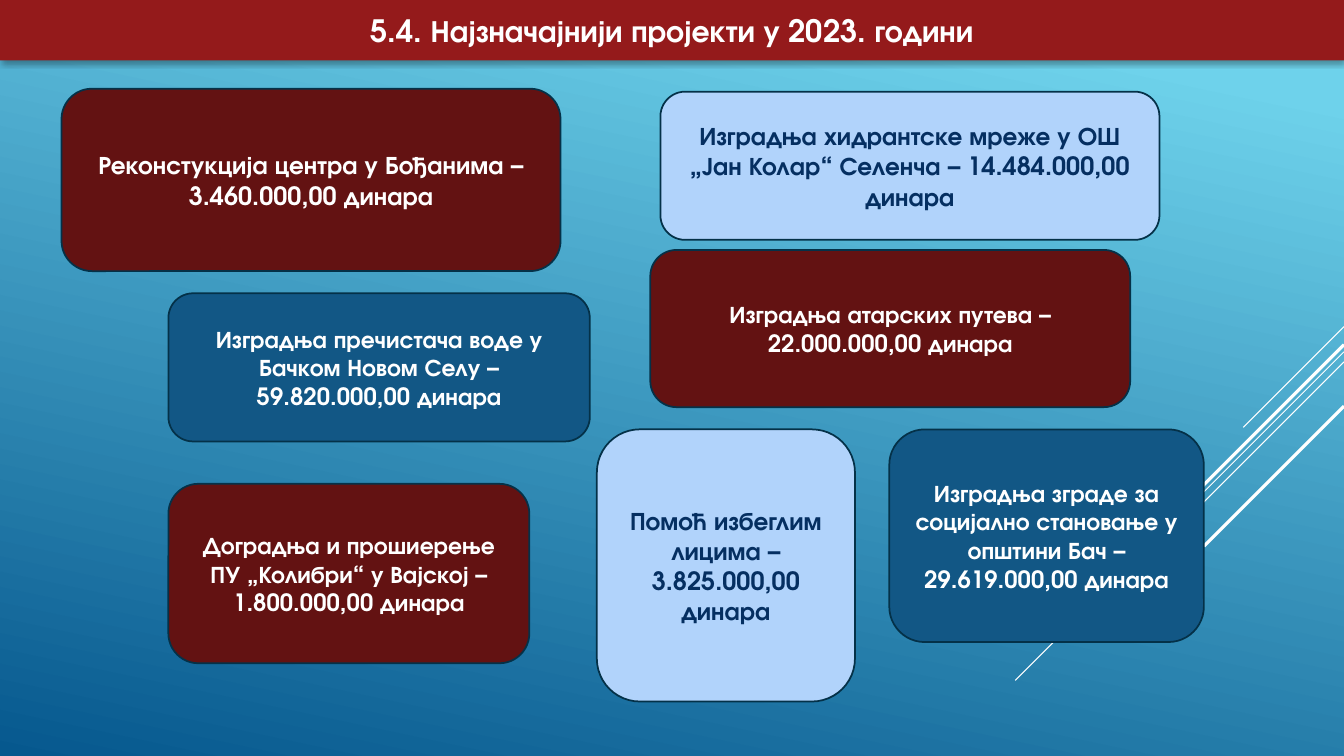
from lxml import etree
from pptx import Presentation
from pptx.dml.color import RGBColor
from pptx.enum.shapes import MSO_CONNECTOR, MSO_SHAPE
from pptx.enum.text import MSO_ANCHOR, MSO_AUTO_SIZE, PP_ALIGN
from pptx.oxml import parse_xml
from pptx.oxml.ns import nsdecls, qn
from pptx.util import Inches, Pt

WIDTH, HEIGHT = 13.33, 7.5
FONT = "TeX Gyre Adventor"
WHITE = RGBColor(0xFF, 0xFF, 0xFF)
NAVY = RGBColor(0x05, 0x2F, 0x61)
OUTLINE = RGBColor(0x04, 0x31, 0x48)
RED = RGBColor(0x94, 0x1A, 0x1B)
MAROON = RGBColor(0x63, 0x12, 0x12)
BLUE = RGBColor(0x12, 0x57, 0x85)
PALE = RGBColor(0xB1, 0xD3, 0xFB)
SKY = RGBColor(0x6E, 0xD2, 0xEB)
DEEP = RGBColor(0x06, 0x58, 0x8E)

TITLE = "5.4. Најзначајнији пројекти у 2023. години"

# Text, (left, top, width, height), fill, font size
PROJECTS = [
    ("Реконстукција центра у Бођанима – 3.460.000,00 динара",
     (0.61, 0.88, 4.95, 1.81), MAROON, 18),
    ("Доградња и прошиерење ПУ „Колибри“ у Вајској – 1.800.000,00 динара",
     (1.67, 4.8, 3.58, 1.78), MAROON, 17),
    ("Изградња хидрантске мреже у ОШ „Јан Колар“ Селенча – 14.484.000,00 динара",
     (6.55, 0.91, 4.95, 1.47), PALE, 18),
    ("Изградња атарских путева – 22.000.000,00 динара",
     (6.45, 2.48, 4.76, 1.56), MAROON, 17),
    ("Помоћ избеглим лицима – 3.825.000,00 динара",
     (5.92, 4.26, 2.56, 2.7), PALE, 18),
    ("Изградња пречистача воде у Бачком Новом Селу – 59.820.000,00 динара",
     (1.67, 2.91, 4.18, 1.47), BLUE, 17),
    ("Изградња зграде за социјално становање у општини Бач – 29.619.000,00 динара",
     (8.82, 4.26, 3.12, 2.11), BLUE, 17),
]

# Diagonals from the right edge: top, horizontal reach, line width
RAYS = [(3.24, 1.0, 0.75), (3.49, 3.26, 0.75), (3.59, 2.07, 0.75),
        (3.42, 1.91, 2.25), (4.03, 1.39, 2.25)]


def place(s, box):
    s.left, s.top, s.width, s.height = (Inches(v) for v in box)


def write(s, text, size, color):
    tf = s.text_frame
    tf.text = text
    tf.word_wrap = True
    tf.auto_size = MSO_AUTO_SIZE.NONE
    tf.vertical_anchor = MSO_ANCHOR.MIDDLE
    p = tf.paragraphs[0]
    p.alignment = PP_ALIGN.CENTER
    p.font.name, p.font.size, p.font.bold = FONT, Pt(size), True
    p.font.color.rgb = color


def add_title(slide):
    s = slide.shapes.title
    place(s, (0, 0, WIDTH, 0.6))
    # Rounded outline and soft shadow for the title bar
    sp_pr = s._element.spPr
    sp_pr.append(parse_xml(
        f'<a:prstGeom {nsdecls("a")} prst="roundRect"><a:avLst/></a:prstGeom>'))
    s.fill.solid()
    s.fill.fore_color.rgb = RED
    sp_pr.append(parse_xml(
        f'<a:effectLst {nsdecls("a")}><a:outerShdw blurRad="{Pt(3.5)}" '
        f'dist="{Pt(2.2)}" dir="5400000" algn="ctr" rotWithShape="0">'
        '<a:srgbClr val="000000"><a:alpha val="32000"/></a:srgbClr>'
        '</a:outerShdw></a:effectLst>'))
    write(s, TITLE, 22, WHITE)


def add_ray(slide, top, reach, width):
    c = slide.shapes.add_connector(
        MSO_CONNECTOR.STRAIGHT, Inches(WIDTH), Inches(top),
        Inches(WIDTH - reach), Inches(top + reach))
    c.line.color.rgb = WHITE
    c.line.width = Pt(width)
    etree.SubElement(c._element.spPr, qn("a:effectLst"))


def add_project(slide, text, box, fill, size):
    s = slide.shapes.add_shape(MSO_SHAPE.ROUNDED_RECTANGLE,
                               *(Inches(v) for v in box))
    s.shadow.inherit = False
    s.fill.solid()
    s.fill.fore_color.rgb = fill
    s.line.color.rgb = OUTLINE
    s.line.width = Pt(1.25)
    write(s, text, size, NAVY if fill == PALE else WHITE)


def main():
    prs = Presentation()
    prs.slide_width, prs.slide_height = Inches(WIDTH), Inches(HEIGHT)
    slide = prs.slides.add_slide(prs.slide_layouts[5])

    # Background gradient
    fill = slide.background.fill
    fill.gradient()
    fill.gradient_angle = 258
    for stop, position, color in zip(fill.gradient_stops, (0.1, 1), (SKY, DEEP)):
        stop.position = position
        stop.color.rgb = color

    add_title(slide)
    for ray in RAYS:
        add_ray(slide, *ray)
    for project in PROJECTS:
        add_project(slide, *project)
    prs.save("out.pptx")


if __name__ == "__main__":
    main()
